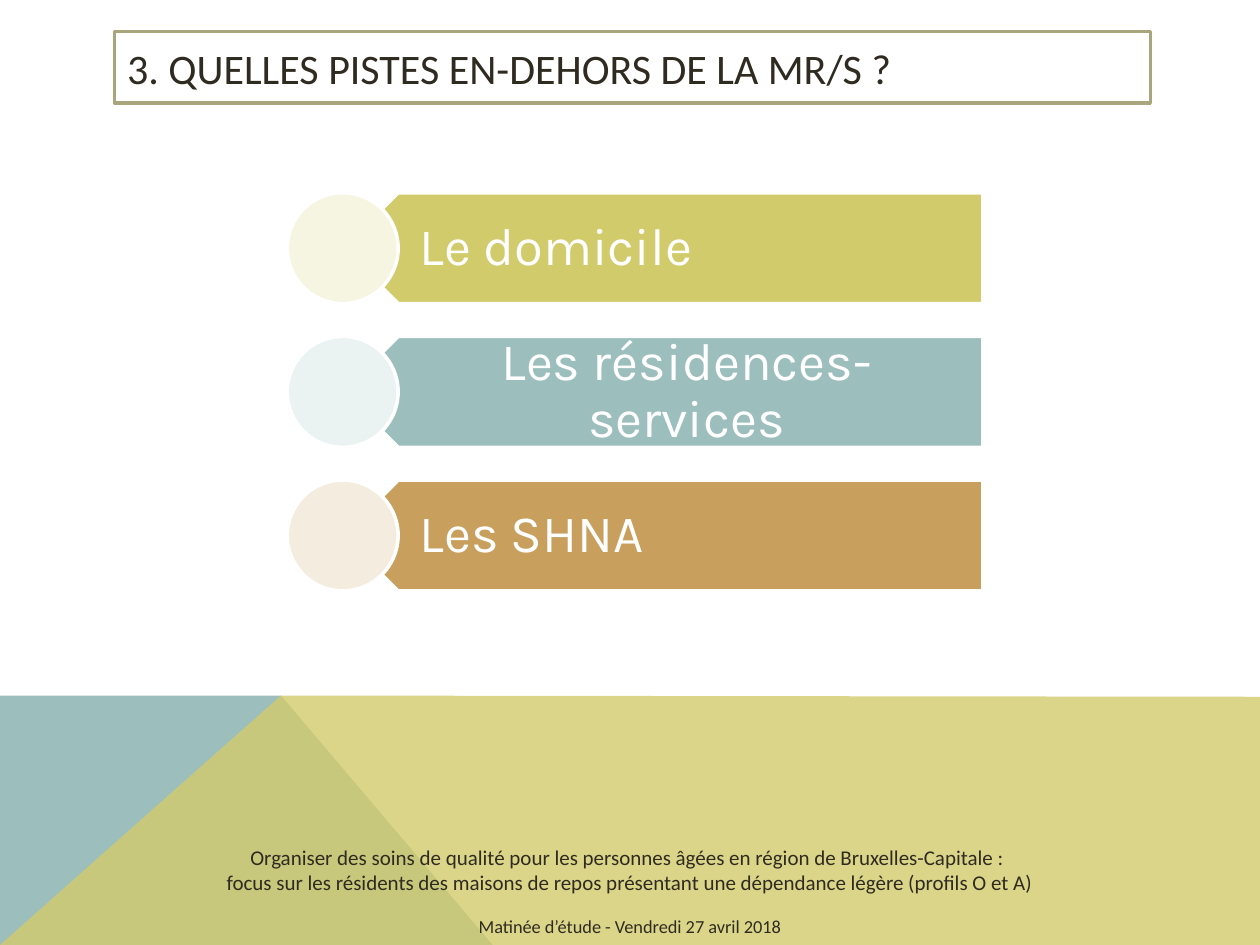
from dataclasses import dataclass

from lxml import etree
from pptx import Presentation
from pptx.dml.color import RGBColor
from pptx.enum.shapes import MSO_SHAPE
from pptx.enum.text import MSO_ANCHOR, PP_ALIGN
from pptx.oxml.ns import qn
from pptx.util import Inches, Pt

RECTANGLE = MSO_SHAPE.RECTANGLE
PENTAGON = MSO_SHAPE.PENTAGON
OVAL = MSO_SHAPE.OVAL
TOP = MSO_ANCHOR.TOP
MIDDLE = MSO_ANCHOR.MIDDLE
LEFT = PP_ALIGN.LEFT
CENTER = PP_ALIGN.CENTER

WHITE = "FFFFFF"
INK = "2F2B20"
OLIVE = "A9A57C"
LIME = "D2CB6C"
TEAL = "9CBEBD"
OCHRE = "C89F5D"

DISC_LEFT = 2.28
DISC_SIZE = 0.88
BANNER_LEFT = DISC_LEFT + DISC_SIZE / 2
BANNER_WIDTH = 5.08
LABEL_INSET = DISC_SIZE / 4
FIRST_TOP = 1.53
ROW_PITCH = 1.14


@dataclass(frozen=True)
class Line:
    text: str
    size: float
    font: str = "Calibri"
    color: str = INK
    align: PP_ALIGN = LEFT
    spacing: float = 1.0
    before: float = 0


@dataclass(frozen=True)
class Option:
    label: str
    banner_color: str
    disc_color: str
    align: PP_ALIGN = LEFT


OPTIONS = [
    Option("Le domicile", LIME, "F6F5E2"),
    Option("Les résidences-services", TEAL, "EBF2F2", CENTER),
    Option("Les SHNA", OCHRE, "F4ECDF"),
]

FOOTER = [
    Line("Organiser des soins de qualité pour les personnes âgées "
         "en région de Bruxelles-Capitale : ", 12, align=CENTER),
    Line("focus sur les résidents des maisons de repos présentant "
         "une dépendance légère (profils O et A)", 12, align=CENTER),
    Line("Matinée d’étude - Vendredi 27 avril 2018", 10.5, align=CENTER, before=12),
]


def rgb(value: str) -> RGBColor:
    return RGBColor.from_string(value)


def apply(target, values: dict) -> None:
    for name, value in values.items():
        setattr(target, name, value)


def paint(shape, fill: str, outline: str | None = None) -> None:
    shape.shadow.inherit = False
    shape.fill.solid()
    shape.fill.fore_color.rgb = rgb(fill)
    if outline:
        shape.line.color.rgb = rgb(outline)
        shape.line.width = Pt(2)
    else:
        shape.line.fill.background()


def add_panel(slide, points: list[tuple[float, float]], fill: str,
              opacity: int = 100):
    corners = [(Inches(x), Inches(y)) for x, y in points]
    builder = slide.shapes.build_freeform(*corners[0])
    builder.add_line_segments(corners[1:], close=True)
    panel = builder.convert_to_shape()
    paint(panel, fill)
    if opacity < 100:
        color = panel.fill._xPr.find(".//" + qn("a:srgbClr"))
        etree.SubElement(color, qn("a:alpha"), val=str(opacity * 1000))


def add_block(slide, kind: MSO_SHAPE, box: tuple[float, ...], fill: str, outline: str):
    block = slide.shapes.add_shape(kind, *map(Inches, box))
    paint(block, fill, outline)
    return block


def write(frame, lines: list[Line], anchor: MSO_ANCHOR,
          margins: tuple[float, ...] = (0.1, 0.05, 0.1, 0.05)) -> None:
    left, top, right, bottom = map(Inches, margins)
    apply(frame, {"word_wrap": True, "vertical_anchor": anchor,
                  "margin_left": left, "margin_top": top,
                  "margin_right": right, "margin_bottom": bottom})
    for index, line in enumerate(lines):
        paragraph = frame.add_paragraph() if index else frame.paragraphs[0]
        apply(paragraph, {"alignment": line.align, "line_spacing": line.spacing,
                          "space_before": Pt(line.before)})
        run = paragraph.add_run()
        run.text = line.text
        apply(run.font, {"name": line.font, "size": Pt(line.size)})
        run.font.color.rgb = rgb(line.color)


def add_option(slide, option: Option, top: float) -> None:
    banner = add_block(slide, PENTAGON, (BANNER_LEFT, top, BANNER_WIDTH, DISC_SIZE),
                       option.banner_color, WHITE)
    banner.rotation = 180
    label = slide.shapes.add_textbox(
        Inches(BANNER_LEFT + LABEL_INSET), Inches(top),
        Inches(BANNER_WIDTH - LABEL_INSET), Inches(DISC_SIZE))
    write(label.text_frame,
          [Line(option.label, 30, "Karla", WHITE, option.align, 0.9)],
          MIDDLE, (0.39, 0.12, 0.23, 0.12))
    add_block(slide, OVAL, (DISC_LEFT, top, DISC_SIZE, DISC_SIZE),
              option.disc_color, WHITE)


def main() -> None:
    deck = Presentation()
    apply(deck, {"slide_width": Inches(10), "slide_height": Inches(7.5)})
    slide = deck.slides.add_slide(deck.slide_layouts[6])

    add_panel(slide, [(0, 7.5), (0, 5.52), (2.23, 5.52), (3.91, 7.5)], TEAL)
    add_panel(slide, [(0, 7.5), (2.23, 5.52), (10, 5.53), (10, 7.5)], LIME, 80)

    heading = add_block(slide, RECTANGLE, (0.91, 0.25, 8.22, 0.57), WHITE, OLIVE)
    write(heading.text_frame,
          [Line("3. QUELLES PISTES EN-DEHORS DE LA MR/S ?", 24)], MIDDLE)

    footer = slide.shapes.add_textbox(Inches(0), Inches(6.65), Inches(10), Inches(0.85))
    write(footer.text_frame, FOOTER, TOP)

    for row, option in enumerate(OPTIONS):
        add_option(slide, option, FIRST_TOP + row * ROW_PITCH)

    deck.save("out.pptx")


if __name__ == "__main__":
    main()
